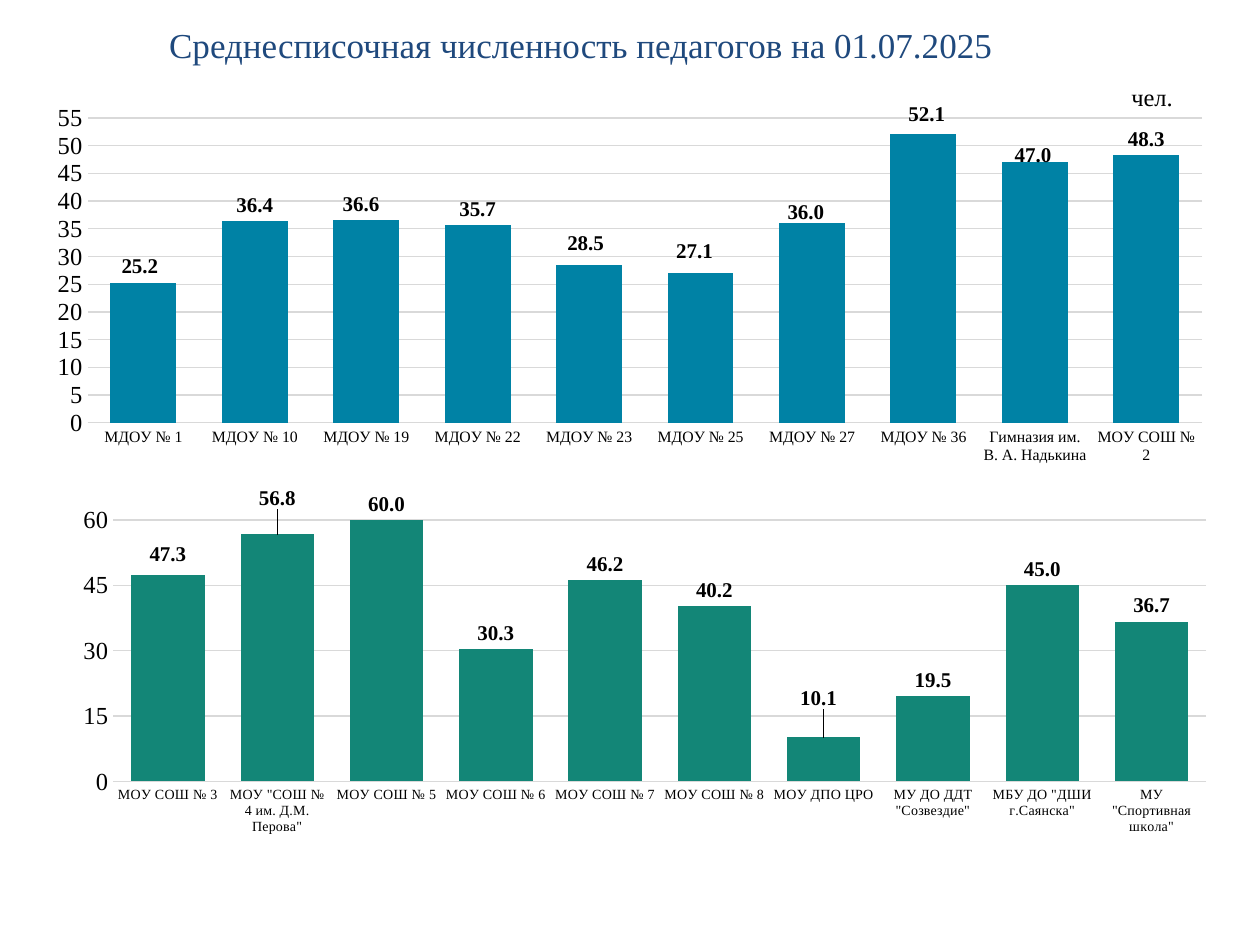
"""Build a slide with two column charts of average teacher headcount by institution."""
import lxml.etree
import pptx
import pptx.chart.data
import pptx.dml.color
import pptx.enum.chart
import pptx.enum.text
import pptx.oxml.ns
import pptx.util

Pt = pptx.util.Pt
FONT = "Times New Roman"
COLORS = {"title": "1F497D", "text": "000000", "grid": "D9D9D9", "upper": "0082A5", "lower": "138677"}
UPPER = {
    "frame": (20.16, 55.44, 680.4, 214.56),
    "color": "upper",
    "rows": [
        ("МДОУ № 1", 25.2), ("МДОУ № 10", 36.4), ("МДОУ № 19", 36.6), ("МДОУ № 22", 35.7),
        ("МДОУ № 23", 28.5), ("МДОУ № 25", 27.1), ("МДОУ № 27", 36.0), ("МДОУ № 36", 52.1),
        ("Гимназия им. В. А. Надькина", 47.0), ("МОУ СОШ № 2", 48.3),
    ],
    "gap": 69, "top": 55, "step": 5, "category_size": 9,
    "plot": (0.044, 0.056, 0.936, 0.812),
    "shifts": {0: (-2, -0.5), 2: (-3, 0), 4: (-2, -3), 5: (-3.5, -3),
               6: (-3.5, 3), 7: (2, -2), 8: (-1, 5)},
}
LOWER = {
    "frame": (14.4, 270, 680.4, 254.88),
    "color": "lower",
    "rows": [
        ("МОУ СОШ № 3", 47.3), ('МОУ "СОШ № 4 им. Д.М. Перова"', 56.8), ("МОУ СОШ № 5", 60.0),
        ("МОУ СОШ № 6", 30.3), ("МОУ СОШ № 7", 46.2), ("МОУ СОШ № 8", 40.2), ("МОУ ДПО ЦРО", 10.1),
        ('МУ ДО ДДТ "Созвездие"', 19.5), ('МБУ ДО "ДШИ г.Саянска"', 45.0),
        ('МУ "Спортивная школа"', 36.7),
    ],
    "gap": 49, "top": 65, "step": 15, "category_size": 8,
    "plot": (0.074, 0.058, 0.918, 0.635),
    "shifts": {0: (0, -3), 1: (0, -11.5), 6: (-3, -13)},
}


def rgb(name):
    return pptx.dml.color.RGBColor.from_string(COLORS[name])


def style_font(font, size, color="text", bold=False):
    font.name = FONT
    font.size = Pt(size)
    font.bold = bold
    font.color.rgb = rgb(color)


def write_line(box, text, size, color, align, wrap):
    frame = box.text_frame
    frame.word_wrap = wrap
    frame.auto_size = pptx.enum.text.MSO_AUTO_SIZE.NONE
    para = frame.paragraphs[0]
    para.alignment = align
    span = para.add_run()
    span.text = text
    style_font(span.font, size, color)


def add_title(page, text):
    title = page.shapes.title
    title.left, title.top, title.width, title.height = map(Pt, (36.72, 9.36, 595.44, 31.68))
    title.text_frame.vertical_anchor = pptx.enum.text.MSO_ANCHOR.MIDDLE
    write_line(title, text, 20, "title", pptx.enum.text.PP_ALIGN.CENTER, True)


def add_unit(page, text):
    box = page.shapes.add_textbox(*map(Pt, (639.36, 43.2, 39.6, 24.48)))
    write_line(box, text, 14, "text", pptx.enum.text.PP_ALIGN.LEFT, False)


def make_layout(values, target=None):
    tag = pptx.oxml.ns.qn
    layout = lxml.etree.Element(tag("c:layout"))
    manual = lxml.etree.SubElement(layout, tag("c:manualLayout"))
    settings = []
    if target:
        settings = [("layoutTarget", target), ("xMode", "edge"), ("yMode", "edge")]
    settings += zip("xywh", values)
    for name, value in settings:
        lxml.etree.SubElement(manual, tag(f"c:{name}")).set("val", str(value))
    return layout


def place_plot(chart, values):
    area = chart.plots[0]._element.getparent()
    for layout in area.findall(pptx.oxml.ns.qn("c:layout")):
        area.remove(layout)
    area.insert(0, make_layout(values, "inner"))


def style_axes(chart, details):
    for axis, size in ((chart.category_axis, details["category_size"]), (chart.value_axis, 14)):
        axis.major_tick_mark = pptx.enum.chart.XL_TICK_MARK.NONE
        axis.minor_tick_mark = pptx.enum.chart.XL_TICK_MARK.NONE
        style_font(axis.tick_labels.font, size)
    value_axis = chart.value_axis
    value_axis.minimum_scale = 0
    value_axis.maximum_scale = details["top"]
    value_axis.major_unit = details["step"]
    value_axis.has_major_gridlines = True
    value_axis.tick_labels.number_format = "#,##0"
    value_axis.tick_labels.number_format_is_linked = False
    value_axis.format.line.fill.background()
    for line in (chart.category_axis.format.line, value_axis.major_gridlines.format.line):
        line.color.rgb = rgb("grid")
        line.width = Pt(0.75)


def label_columns(series, details):
    outside = pptx.enum.chart.XL_LABEL_POSITION.OUTSIDE_END
    labels = series.data_labels
    labels.show_value = True
    labels.number_format = "#,##0.0"
    labels.number_format_is_linked = False
    labels.position = outside
    style_font(labels.font, 12, bold=True)
    width, height = details["frame"][2:]
    for index, (across, down) in details["shifts"].items():
        label = series.points[index].data_label
        label.position = outside
        style_font(label.font, 12, bold=True)
        marker = labels._element.xpath(f"c:dLbl/c:idx[@val='{index}']")[0]
        marker.addnext(make_layout((round(across / width, 4), round(down / height, 4))))


def add_columns(page, details):
    data = pptx.chart.data.CategoryChartData(number_format="#,##0.0")
    names, values = zip(*details["rows"])
    data.categories = names
    data.add_series("Series 1", values)
    kind = pptx.enum.chart.XL_CHART_TYPE.COLUMN_CLUSTERED
    chart = page.shapes.add_chart(kind, *map(Pt, details["frame"]), data).chart
    chart.has_legend = False
    chart.has_title = False
    style_font(chart.font, 10)
    chart.font.name = "Calibri"
    plot = chart.plots[0]
    plot.vary_by_categories = False
    plot.gap_width = details["gap"]
    plot.overlap = -27
    series = plot.series[0]
    series.format.fill.solid()
    series.format.fill.fore_color.rgb = rgb(details["color"])
    style_axes(chart, details)
    label_columns(series, details)
    place_plot(chart, details["plot"])


def main():
    deck = pptx.Presentation()
    deck.slide_width, deck.slide_height = Pt(720), Pt(540)
    page = deck.slides.add_slide(deck.slide_layouts.get_by_name("Title Only"))
    add_title(page, "Среднесписочная численность педагогов на 01.07.2025 ")
    for details in (UPPER, LOWER):
        add_columns(page, details)
    add_unit(page, "чел.")
    deck.save("out.pptx")


if __name__ == "__main__":
    main()
